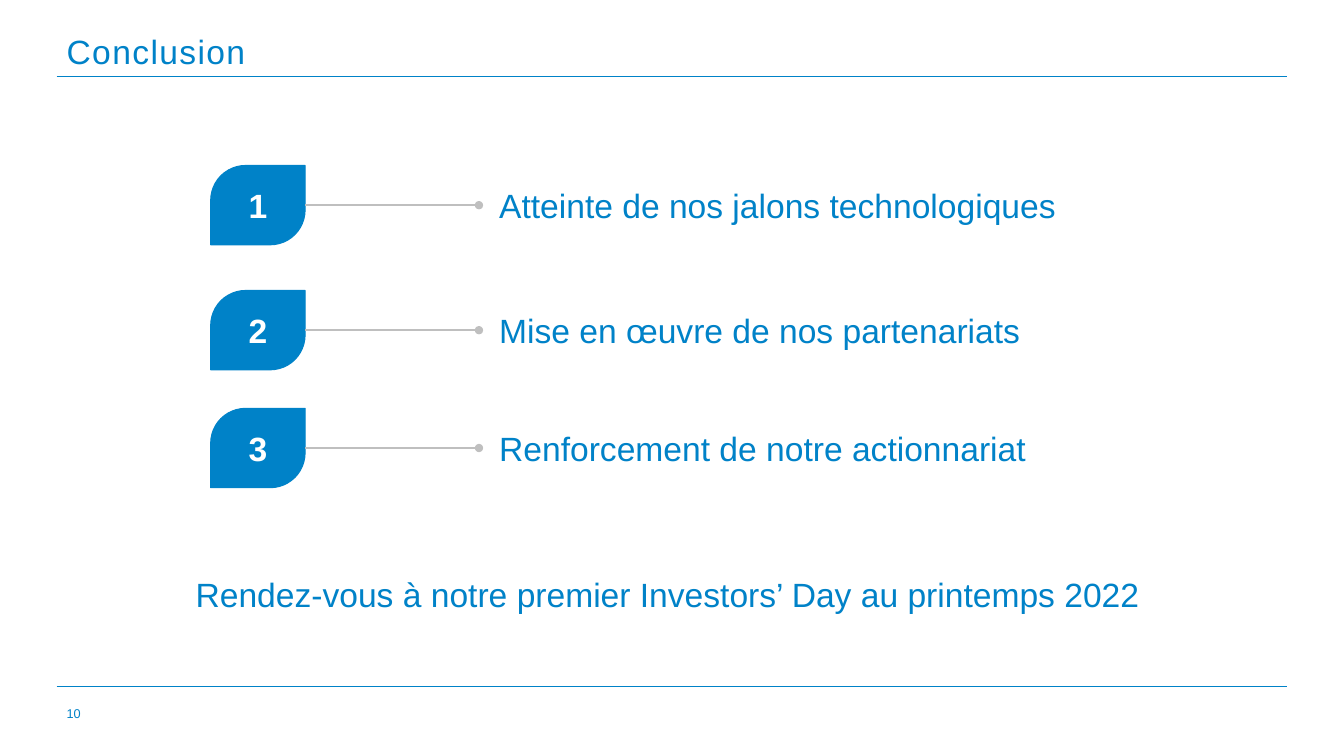
from dataclasses import dataclass

from lxml import etree
from pptx import Presentation
from pptx.dml.color import RGBColor
from pptx.enum.shapes import MSO_CONNECTOR, MSO_SHAPE
from pptx.enum.text import MSO_ANCHOR, PP_ALIGN
from pptx.oxml.ns import qn
from pptx.util import Cm, Pt

STRAIGHT = MSO_CONNECTOR.STRAIGHT
LEAF = MSO_SHAPE.ROUND_2_DIAG_RECTANGLE
TOP, MIDDLE = MSO_ANCHOR.TOP, MSO_ANCHOR.MIDDLE
LEFT, CENTER, JUSTIFY = PP_ALIGN.LEFT, PP_ALIGN.CENTER, PP_ALIGN.JUSTIFY
LEFT_SIDE, RIGHT_SIDE = 1, 3

# Content: label, top and width of its box (cm), alignment
TITLE = "Conclusion"
POINTS = [
    ("Atteinte de nos jalons technologiques", 4.17, 15.09, LEFT),
    ("Mise en œuvre de nos partenariats", 7.32, 15.6, LEFT),
    ("Renforcement de notre actionnariat", 10.29, 16.21, JUSTIFY),
]
CLOSING = "Rendez-vous à notre premier Investors’ Day au printemps 2022"
PAGE_NUMBER = "10"

# Geometry in cm
MARGIN, RULE_RIGHT = 1.43, 32.43
RULE_TOPS = (1.93, 17.29)
BADGE_LEFT, BADGE_WIDTH, ROW_HEIGHT = 5.31, 2.38, 2.0
LABEL_LEFT = 12.07
TEXT_INDENT = 0.51


@dataclass(frozen=True)
class Theme:
    font: str = "Arial"
    blue: RGBColor = RGBColor(0x00, 0x82, 0xC8)
    grey: RGBColor = RGBColor(0xBF, 0xBF, 0xBF)
    white: RGBColor = RGBColor(0xFF, 0xFF, 0xFF)
    body: float = 24
    small: float = 9.1
    rule: float = 0.75
    link: float = 1


THEME = Theme()


def write(shape, text, size=THEME.body, color=THEME.blue, bold=False,
          align=LEFT, anchor=MIDDLE):
    frame = shape.text_frame
    frame.text = text
    frame.word_wrap = True
    frame.vertical_anchor = anchor
    para = frame.paragraphs[0]
    para.alignment = align
    font = para.runs[0].font
    font.name, font.size, font.bold = THEME.font, Pt(size), bold
    font.color.rgb = color
    return para


def add_text(page, text, left, top, width, height, indent=0.25, **style):
    box = page.shapes.add_textbox(Cm(left), Cm(top), Cm(width), Cm(height))
    box.text_frame.margin_left = Cm(indent)
    write(box, text, **style)
    return box


def add_line(page, start, end, color, width):
    line = page.shapes.add_connector(STRAIGHT, *map(Cm, start + end))
    line.line.color.rgb = color
    line.line.width = Pt(width)
    etree.SubElement(line._element.spPr, qn("a:effectLst"))
    return line


def add_badge(page, number, top):
    badge = page.shapes.add_shape(LEAF, Cm(BADGE_LEFT), Cm(top),
                                  Cm(BADGE_WIDTH), Cm(ROW_HEIGHT))
    badge.adjustments[0], badge.adjustments[1] = 0.44, 0
    badge.shadow.inherit = False
    badge.fill.solid()
    badge.fill.fore_color.rgb = THEME.blue
    badge.line.color.rgb = THEME.blue
    badge.line.width = Pt(THEME.rule)
    write(badge, str(number), color=THEME.white, bold=True, align=CENTER)
    return badge


def add_point(page, number, text, top, width, align):
    label = add_text(page, text, LABEL_LEFT, top, width, ROW_HEIGHT,
                     TEXT_INDENT, align=align)
    badge = add_badge(page, number, top)
    middle = top + ROW_HEIGHT / 2
    link = add_line(page, (BADGE_LEFT + BADGE_WIDTH, middle),
                    (LABEL_LEFT, middle), THEME.grey, THEME.link)
    link.begin_connect(badge, RIGHT_SIDE)
    link.end_connect(label, LEFT_SIDE)
    etree.SubElement(link.line._get_or_add_ln(), qn("a:tailEnd"), type="oval")


def main():
    deck = Presentation()
    deck.slide_width, deck.slide_height = Cm(33.87), Cm(19.05)
    page = deck.slides.add_slide(deck.slide_layouts[6])

    # Frame: rules, page number and title
    for top in RULE_TOPS:
        add_line(page, (MARGIN, top), (RULE_RIGHT, top), THEME.blue, THEME.rule)
    add_text(page, PAGE_NUMBER, MARGIN, 17.65, 12.09, 1.02,
             size=THEME.small, anchor=TOP)
    title = add_text(page, TITLE, MARGIN, 0.66, RULE_RIGHT - MARGIN, 1.27)
    title_run = title.text_frame.paragraphs[0].runs[0]
    title_run.font._element.set("spc", "100")

    # Numbered points
    for number, point in enumerate(POINTS, start=1):
        add_point(page, number, *point)

    # Closing line
    add_text(page, CLOSING, 4.42, 13.97, 26.06, ROW_HEIGHT, TEXT_INDENT,
             align=JUSTIFY)

    deck.save("out.pptx")


if __name__ == "__main__":
    main()
